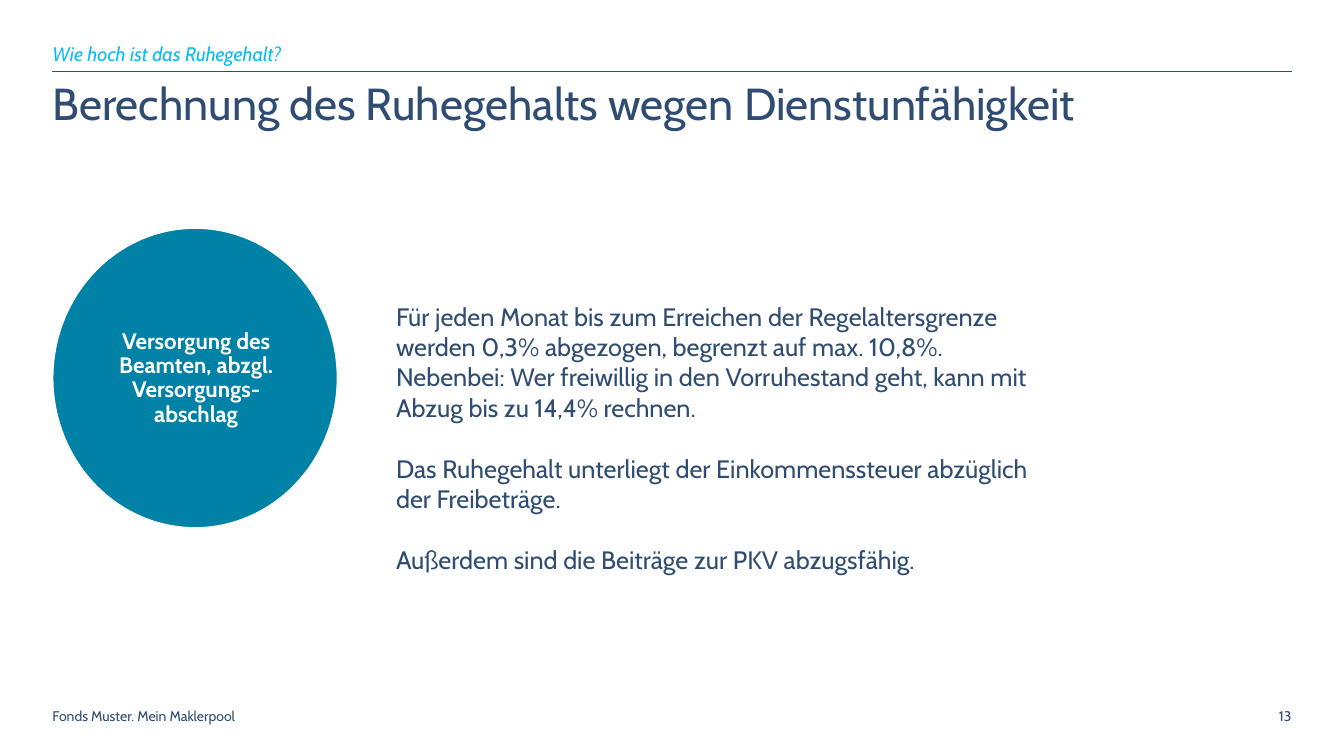
from dataclasses import dataclass

from pptx import Presentation
from pptx.dml.color import RGBColor
from pptx.enum.shapes import MSO_CONNECTOR, MSO_SHAPE
from pptx.enum.text import MSO_ANCHOR, PP_ALIGN
from pptx.oxml.ns import qn
from pptx.util import Emu, Pt

PX = 9144  # EMU, 100 px to the inch
MARGIN, RIGHT = 52, 1281


@dataclass(frozen=True)
class Theme:
    font: str = "Cabin"
    navy: str = "2F4D72"
    cyan: str = "0ABBEF"
    teal: str = "0081A6"
    white: str = "FFFFFF"
    title: int = 32
    body: int = 18
    label: int = 16
    kicker: int = 14
    footer: int = 10


THEME = Theme()


def px(*lengths):
    return [Emu(length * PX) for length in lengths]


def set_attributes(target, values):
    for name, value in values.items():
        setattr(target, name, value)


def write_text(shape, texts, size, color=THEME.navy, inset=(0, 0),
               anchor=MSO_ANCHOR.TOP, font=None, paragraph_format=None, gap=0):
    """Fill a shape with paragraphs; inset is (sides, top and bottom) in px."""
    frame = shape.text_frame
    side, end = px(*inset)
    set_attributes(frame, {
        "word_wrap": True, "vertical_anchor": anchor,
        "margin_left": side, "margin_right": side,
        "margin_top": end, "margin_bottom": end,
    })
    for index, text in enumerate(texts):
        paragraph = frame.add_paragraph() if index else frame.paragraphs[0]
        paragraph.text = text
        if index:
            paragraph.space_before = Pt(gap)
        set_attributes(paragraph, paragraph_format or {})
        set_attributes(paragraph.font, {"name": THEME.font, "size": Pt(size), **(font or {})})
        paragraph.font.color.rgb = RGBColor.from_string(color)


def add_text(slide, box, texts, size, **options):
    write_text(slide.shapes.add_textbox(*px(*box)), texts, size, **options)


def add_filled_shape(slide, kind, box, fill, outline=None):
    shape = slide.shapes.add_shape(kind, *px(*box))
    shape.shadow.inherit = False
    shape.fill.solid()
    shape.fill.fore_color.rgb = RGBColor.from_string(fill)
    if outline:
        shape.line.color.rgb = RGBColor.from_string(outline)
        shape.line.width = Pt(1.5)
    else:
        shape.line.fill.background()
    return shape


def add_header_rule(slide, y):
    rule = slide.shapes.add_connector(MSO_CONNECTOR.STRAIGHT, *px(MARGIN, y, RIGHT, y))
    rule.line.color.rgb = RGBColor.from_string(THEME.navy)
    rule.line.width = Pt(0.5)
    properties = rule._element.spPr
    properties.append(properties.makeelement(qn("a:effectLst"), {}))


def add_topic_circle(slide, text):
    add_filled_shape(slide, MSO_SHAPE.OVAL, (MARGIN, 226, 283, 298), THEME.teal, THEME.white)
    label = add_filled_shape(slide, MSO_SHAPE.RECTANGLE, (100, 281, 189, 189), THEME.teal)
    write_text(label, [text], THEME.label, color=THEME.white, inset=(2, 2),
               anchor=MSO_ANCHOR.MIDDLE, font={"bold": True},
               paragraph_format={"alignment": PP_ALIGN.CENTER, "line_spacing": 0.9})


def main():
    presentation = Presentation()
    presentation.slide_width, presentation.slide_height = px(1333, 750)
    slide = presentation.slides.add_slide(presentation.slide_layouts[6])

    add_header_rule(slide, 71)
    add_text(slide, (MARGIN, 702, 230, 17), ["Fonds Muster. Mein Maklerpool"],
             THEME.footer, anchor=MSO_ANCHOR.MIDDLE)
    add_text(slide, (RIGHT - 50, 702, 50, 17), ["13"], THEME.footer,
             anchor=MSO_ANCHOR.MIDDLE, paragraph_format={"alignment": PP_ALIGN.RIGHT})
    add_text(slide, (MARGIN, 81, 1228, 48),
             ["Berechnung des Ruhegehalts wegen Dienstunfähigkeit"],
             THEME.title, paragraph_format={"line_spacing": 0.9})
    add_text(slide, (MARGIN, 41, 1228, 24), ["Wie hoch ist das Ruhegehalt?"], THEME.kicker,
             color=THEME.cyan, anchor=MSO_ANCHOR.BOTTOM, font={"italic": True})
    add_topic_circle(slide, "Versorgung des Beamten, abzgl. Versorgungs-abschlag")
    add_text(slide, (383, 294, 667, 283), [
        "Für jeden Monat bis zum Erreichen der Regelaltersgrenze werden 0,3% abgezogen, "
        "begrenzt auf max. 10,8%. Nebenbei: Wer freiwillig in den Vorruhestand geht, "
        "kann mit Abzug bis zu 14,4% rechnen.",
        "Das Ruhegehalt unterliegt der Einkommenssteuer abzüglich der Freibeträge.",
        "Außerdem sind die Beiträge zur PKV abzugsfähig.",
    ], THEME.body, inset=(10, 5), gap=22)

    presentation.save("out.pptx")


if __name__ == "__main__":
    main()
